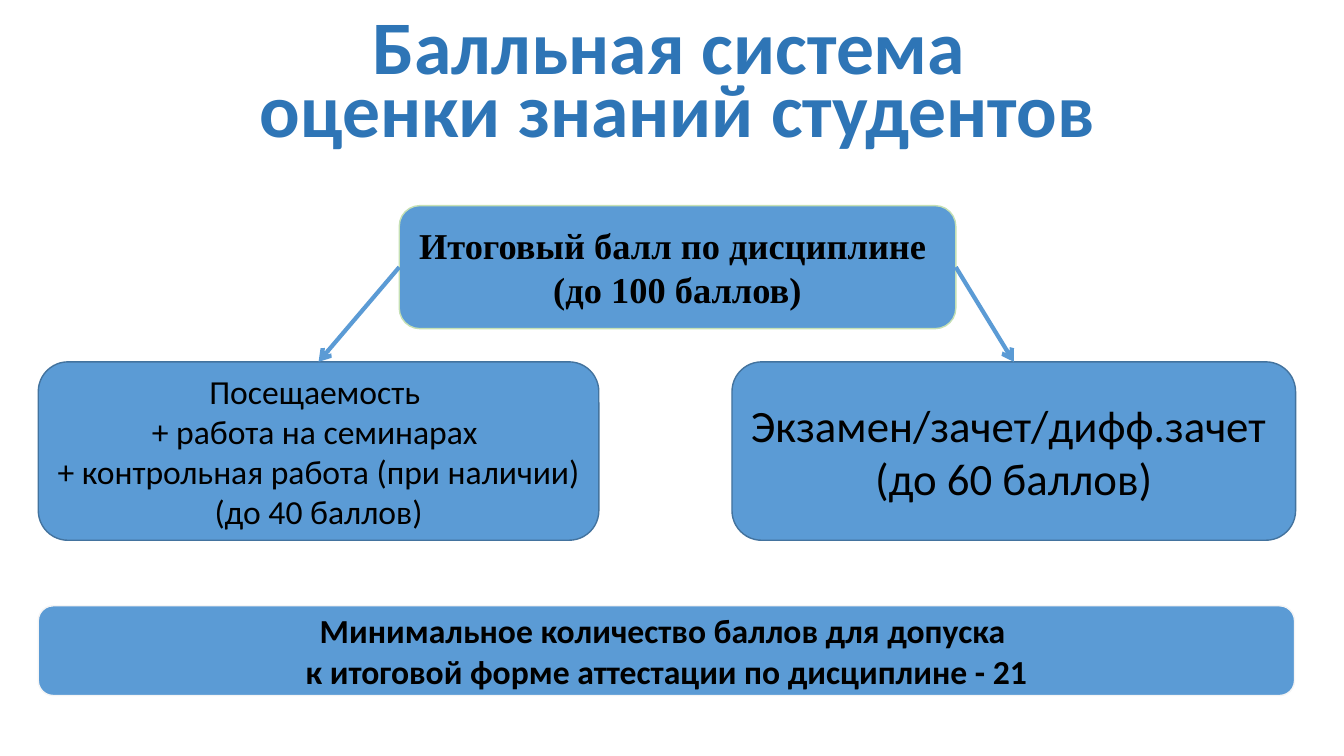
import pptx
import pptx.util
import pptx.dml.color
import pptx.enum.shapes
import pptx.enum.text
import pptx.oxml.ns
from lxml import etree

TOP, LEFT, RIGHT = 0, 1, 3
BLACK = "000000"
BLUE = "5B9BD5"
DARK_BLUE = "43739E"


def px(length):
    """Turn px (100 to the inch) into EMU."""
    return pptx.util.Emu(length * 9144)


def color(value):
    return pptx.dml.color.RGBColor.from_string(value)


class SchemeSlide:
    """Holds the slide and the common style of its boxes and arrows."""

    def __init__(self, presentation):
        self.slide = presentation.slides.add_slide(presentation.slide_layouts[5])
        self.fill = BLUE
        self.font_name = "Calibri"

    def set_text(self, shape, lines, size, font_name=None, bold=False,
                 text_color=BLACK, line_spacing=None):
        """Fill a shape with centred paragraphs; \\v is a line break."""
        frame = shape.text_frame
        frame.word_wrap = True
        frame.auto_size = pptx.enum.text.MSO_AUTO_SIZE.NONE
        frame.vertical_anchor = pptx.enum.text.MSO_ANCHOR.MIDDLE
        frame.text = "\n".join(lines)
        for paragraph in frame.paragraphs:
            paragraph.alignment = pptx.enum.text.PP_ALIGN.CENTER
            paragraph.space_before = pptx.util.Pt(0)
            paragraph.line_spacing = line_spacing
            font = paragraph.font
            font.name = font_name or self.font_name
            font.size = pptx.util.Pt(size)
            font.bold = bold
            font.color.rgb = color(text_color)

    def title(self, text, left, top, width, height):
        title = self.slide.shapes.title
        title.left, title.top = px(left), px(top)
        title.width, title.height = px(width), px(height)
        self.set_text(title, [text], 54, bold=True, text_color="2E75B6",
                      line_spacing=0.7)

    def box(self, left, top, width, height, lines, size, outline=DARK_BLUE,
            **text_style):
        box = self.slide.shapes.add_shape(
            pptx.enum.shapes.MSO_SHAPE.ROUNDED_RECTANGLE,
            px(left), px(top), px(width), px(height))
        box.shadow.inherit = False
        box.fill.solid()
        box.fill.fore_color.rgb = color(self.fill)
        box.line.color.rgb = color(outline)
        box.line.width = pptx.util.Pt(1)
        self.set_text(box, lines, size, **text_style)
        return box

    def arrow(self, start, start_side, end, end_side):
        arrow = self.slide.shapes.add_connector(
            pptx.enum.shapes.MSO_CONNECTOR.STRAIGHT, 0, 0, 0, 0)
        arrow.begin_connect(start, start_side)
        arrow.end_connect(end, end_side)
        arrow.line.color.rgb = color(self.fill)
        arrow.line.width = pptx.util.Pt(3)
        qn = pptx.oxml.ns.qn
        properties = arrow._element.spPr
        etree.SubElement(properties.find(qn("a:ln")), qn("a:tailEnd"), type="arrow")
        etree.SubElement(properties, qn("a:effectLst"))


def main():
    presentation = pptx.Presentation()
    presentation.slide_width, presentation.slide_height = px(1333), px(750)
    scheme = SchemeSlide(presentation)

    scheme.title("Балльная система \vоценки знаний студентов", 97, 14, 1150, 145)
    total = scheme.box(
        396, 204, 552, 122,
        ["Итоговый балл по дисциплине ", "(до 100 баллов)"],
        26, outline="C5E0B4", font_name="Times New Roman", bold=True)
    coursework = scheme.box(
        38, 359, 556, 177,
        ["Посещаемость \v+ работа на семинарах \v"
         "+ контрольная работа (при наличии)", "(до 40 баллов)"], 24)
    exam = scheme.box(
        726, 359, 559, 177,
        ["Экзамен/зачет/дифф.зачет ", "(до 60 баллов)"], 32)
    scheme.arrow(total, RIGHT, exam, TOP)
    scheme.arrow(total, LEFT, coursework, TOP)
    scheme.box(
        38, 601, 1246, 89,
        ["Минимальное количество баллов для допуска ",
         "к итоговой форме аттестации по дисциплине - 21"],
        24, outline="F5F5F5", bold=True)

    presentation.save("out.pptx")


if __name__ == "__main__":
    main()
